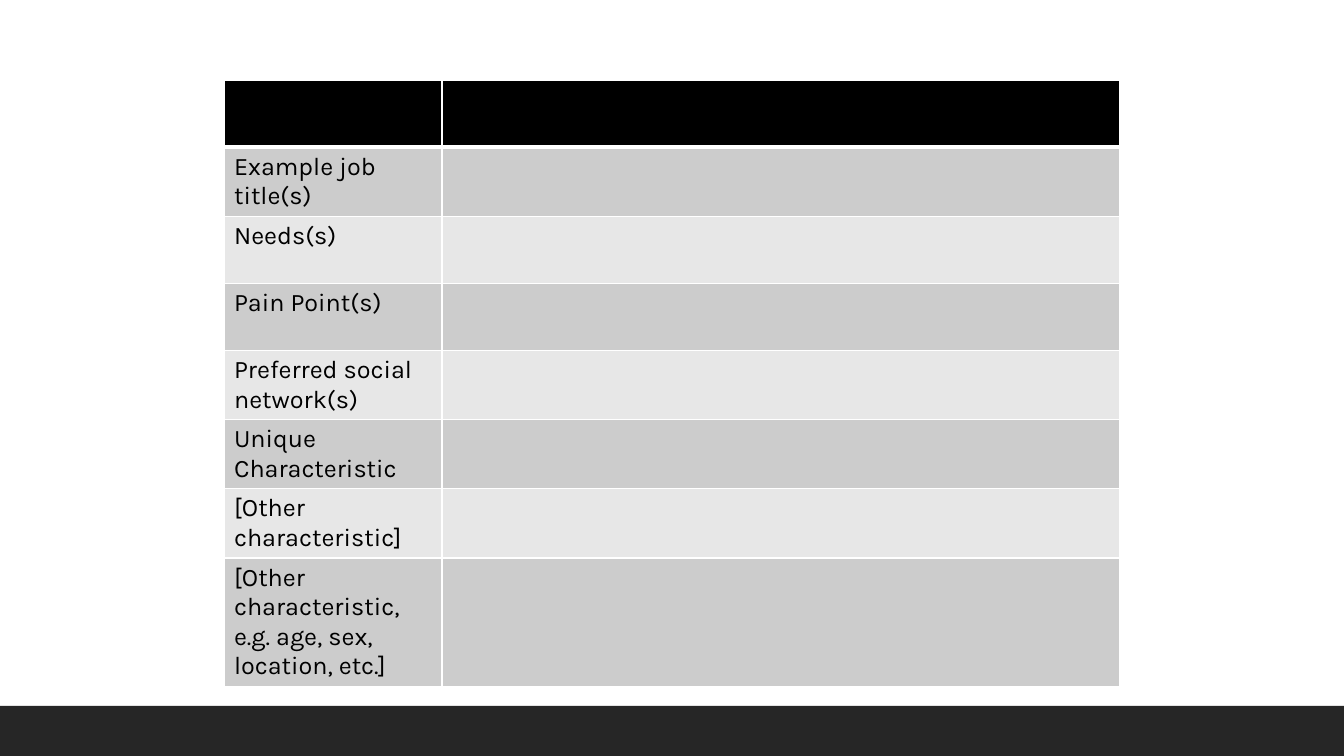
from lxml import etree
from pptx import Presentation
from pptx.dml.color import RGBColor
from pptx.enum import shapes
from pptx.oxml import ns
from pptx import util as u

TRAITS = [
    "Example job title(s)",
    "Needs(s)",
    "Pain Point(s)",
    "Preferred social network(s)",
    "Unique Characteristic",
    "[Other characteristic]",
    "[Other characteristic, e.g. age, sex, location, etc.]",
]
HEADER, BANDS, FOOTER = "000000", ("CCCCCC", "E7E7E7"), "262626"
RULE, INK = "FFFFFF", "000000"
SLIDE_W, SLIDE_H = 1344, 756
FOOTER_H = 50
TABLE_LEFT, TABLE_TOP = 224, 80
COLUMNS = (218, 678)
ROW_H = 67


def px(n):
    return u.Emu(round(n * 12192000 / SLIDE_W))


def color(value):
    return RGBColor.from_string(value)


def paint(fill, value):
    fill.solid()
    fill.fore_color.rgb = color(value)


def write(frame, words, size=18, font="Karla", ink=INK):
    run = frame.paragraphs[0].add_run()
    run.text = words
    run.font.size = u.Pt(size)
    run.font.name = font
    run.font.color.rgb = color(ink)


def border(cell, **widths):
    """Rule the cell's sides; widths are points, given in the order L, R, T, B."""
    props = cell._tc.get_or_add_tcPr()
    for side, width in widths.items():
        line = etree.SubElement(props, ns.qn(f"a:ln{side}"), w=str(u.Pt(width)))
        solid = etree.SubElement(line, ns.qn("a:solidFill"))
        etree.SubElement(solid, ns.qn("a:srgbClr"), val=RULE)


def add_footer(slide):
    footer = slide.shapes.add_shape(
        shapes.MSO_SHAPE.RECTANGLE,
        0, px(SLIDE_H - FOOTER_H), px(SLIDE_W), px(FOOTER_H))
    footer.shadow.inherit = False
    paint(footer.fill, FOOTER)
    footer.line.fill.background()


def add_persona(slide):
    rows = ["", *TRAITS]
    persona = slide.shapes.add_table(
        len(rows), len(COLUMNS), px(TABLE_LEFT), px(TABLE_TOP),
        px(sum(COLUMNS)), px(ROW_H * len(rows))).table
    for column, width in zip(persona.columns, COLUMNS):
        column.width = px(width)
    for r, trait in enumerate(rows):
        persona.rows[r].height = px(ROW_H)
        for cell in persona.rows[r].cells:
            border(cell, L=1, R=1, T=3 if r == 1 else 1, B=3 if r == 0 else 1)
            paint(cell.fill, BANDS[(r - 1) % 2] if r else HEADER)
        if trait:
            write(persona.cell(r, 0).text_frame, trait)


def main():
    deck = Presentation()
    deck.slide_width, deck.slide_height = px(SLIDE_W), px(SLIDE_H)
    slide = deck.slides.add_slide(deck.slide_layouts[6])
    add_footer(slide)
    add_persona(slide)
    deck.save("out.pptx")


if __name__ == "__main__":
    main()
